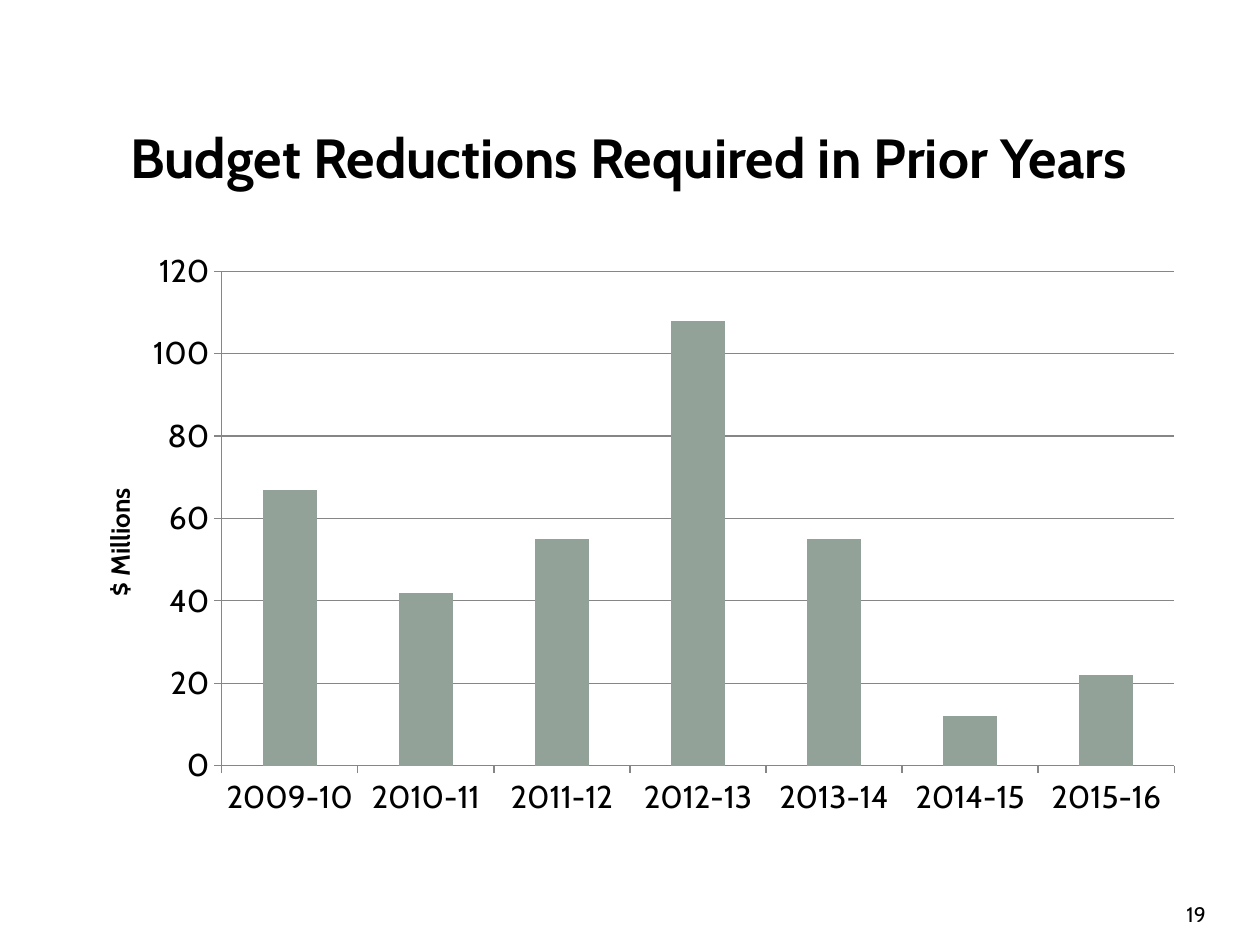
import pptx
import pptx.chart.data
import pptx.dml.color
import pptx.enum.chart
import pptx.enum.text
import pptx.oxml
import pptx.oxml.ns
import pptx.util

Cm = pptx.util.Cm
Pt = pptx.util.Pt

REDUCTIONS = {
    "2009-10": 67,
    "2010-11": 42,
    "2011-12": 55,
    "2012-13": 108,
    "2013-14": 55,
    "2014-15": 12,
    "2015-16": 22,
}


def color(hex_string):
    return pptx.dml.color.RGBColor.from_string(hex_string)


def set_layout(parent, index, **fractions):
    """Place a chart part by fractions of the chart's size."""
    for old in parent.findall(pptx.oxml.ns.qn("c:layout")):
        parent.remove(old)
    target = '<c:layoutTarget val="inner"/>' if "w" in fractions else ""
    modes = "".join(f'<c:{key}Mode val="edge"/>' for key in "xy")
    values = "".join(f'<c:{key} val="{value}"/>' for key, value in fractions.items())
    parent.insert(index, pptx.oxml.parse_xml(
        f'<c:layout {pptx.oxml.ns.nsdecls("c")}><c:manualLayout>'
        f"{target}{modes}{values}</c:manualLayout></c:layout>"))


class Deck:
    font_name = "Cabin"
    ink = "000000"
    bar = "93A299"
    rule = "868686"

    def __init__(self):
        self.presentation = pptx.Presentation()
        self.presentation.slide_width = Cm(25.4)
        self.presentation.slide_height = Cm(19.05)
        self.slide = self.presentation.slides.add_slide(
            self.presentation.slide_layouts[5])

    def style(self, font, size, bold=False):
        font.name = self.font_name
        font.size = Pt(size)
        font.bold = bold
        font.color.rgb = color(self.ink)

    def title(self, text, left, top, width, height):
        heading = self.slide.shapes.title
        heading.left, heading.top = Cm(left), Cm(top)
        heading.width, heading.height = Cm(width), Cm(height)
        frame = heading.text_frame
        frame.text = text
        frame.vertical_anchor = pptx.enum.text.MSO_ANCHOR.MIDDLE
        frame.paragraphs[0].alignment = pptx.enum.text.PP_ALIGN.CENTER
        self.style(frame.paragraphs[0].runs[0].font, 31.5, bold=True)

    def page_number(self, text, left, top, width, height):
        frame = self.slide.shapes.add_textbox(
            Cm(left), Cm(top), Cm(width), Cm(height)).text_frame
        frame.word_wrap = True
        frame.margin_bottom = 0
        frame.vertical_anchor = pptx.enum.text.MSO_ANCHOR.BOTTOM
        frame.text = text
        frame.paragraphs[0].alignment = pptx.enum.text.PP_ALIGN.RIGHT
        self.style(frame.paragraphs[0].runs[0].font, 12)

    def column_chart(self, values, unit, left, top, width, height):
        data = pptx.chart.data.CategoryChartData()
        data.categories = list(values)
        data.add_series("Series 1", list(values.values()))
        chart = self.slide.shapes.add_chart(
            pptx.enum.chart.XL_CHART_TYPE.COLUMN_CLUSTERED,
            Cm(left), Cm(top), Cm(width), Cm(height), data).chart
        chart.has_legend = False
        chart.has_title = False
        self.style(chart.font, 18)

        # Columns
        plot = chart.plots[0]
        plot.gap_width = 150
        plot.vary_by_categories = False
        fill = plot.series[0].format.fill
        fill.solid()
        fill.fore_color.rgb = color(self.bar)

        # Axes and gridlines
        amounts, years = chart.value_axis, chart.category_axis
        amounts.minimum_scale, amounts.maximum_scale = 0, 120
        amounts.major_unit = 20
        amounts.has_major_gridlines = True
        for part in (amounts, years, amounts.major_gridlines):
            part.format.line.color.rgb = color(self.rule)
            part.format.line.width = Pt(0.75)
        for axis in (amounts, years):
            axis.major_tick_mark = pptx.enum.chart.XL_TICK_MARK.OUTSIDE

        # Unit label
        label = amounts.axis_title.text_frame
        label.text = unit
        self.style(label.paragraphs[0].runs[0].font, 15, bold=True)

        # Positions inside the chart
        plot_area = chart.element.xpath("c:chart/c:plotArea")[0]
        set_layout(plot_area, 0, x=0.14, y=0.05, w=0.84, h=0.84)
        set_layout(plot_area.xpath("c:valAx/c:title")[0], 1, x=0.03, y=0.41)

    def save(self):
        self.presentation.save("out.pptx")


def main():
    deck = Deck()
    deck.title("Budget Reductions Required in Prior Years", 1.2, 1.7, 22.94, 2.9)
    deck.column_chart(REDUCTIONS, "$ Millions", 1.27, 4.88, 22.86, 11.86)
    deck.page_number("19", 21.59, 17.78, 2.97, 0.91)
    deck.save()


if __name__ == "__main__":
    main()
